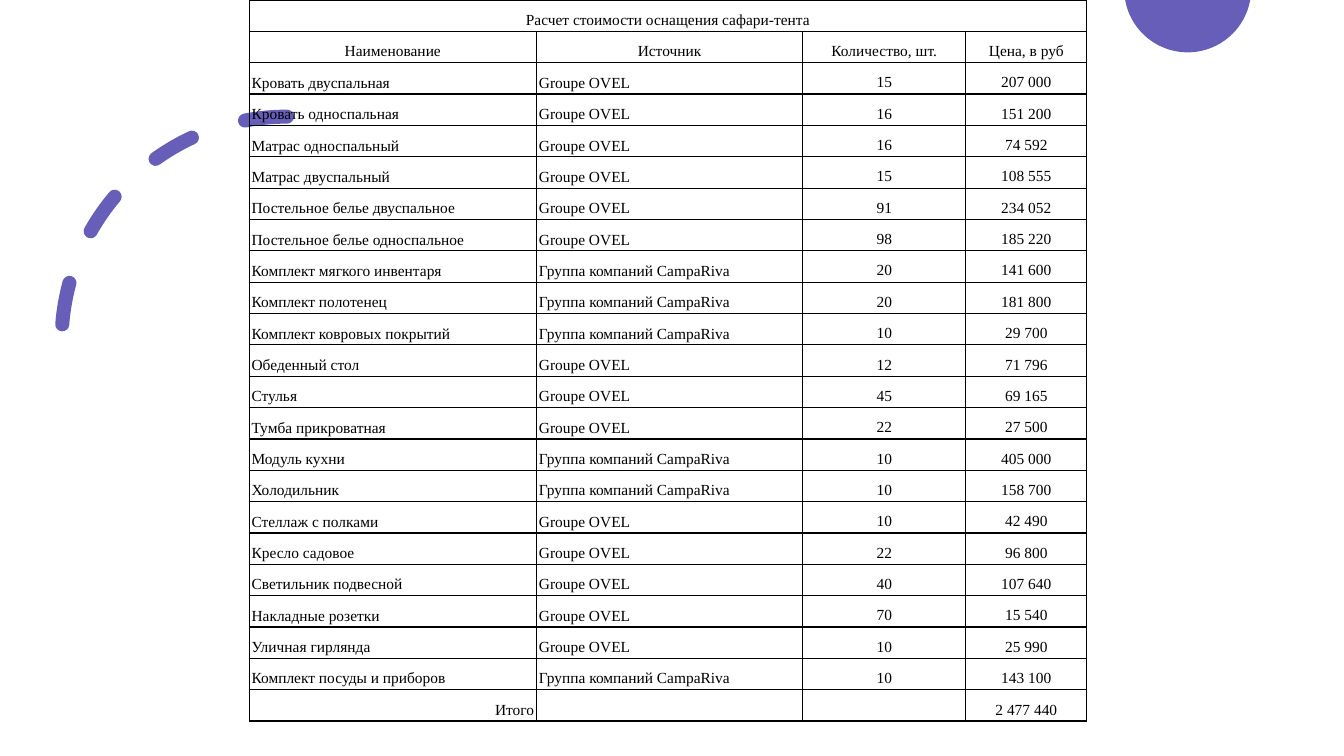
import math
from dataclasses import dataclass
from typing import Any

from lxml import etree
from pptx import Presentation
from pptx import util as u
from pptx.dml.color import RGBColor
from pptx.enum import dml, shapes, text
from pptx.oxml import ns


@dataclass(frozen=True)
class Theme:
    accent: RGBColor = RGBColor(0x66, 0x5E, 0xB8)
    ink: RGBColor = RGBColor(0, 0, 0)
    font: str = "Times New Roman"
    size: u.Pt = u.Pt(11)
    border: u.Pt = u.Pt(1)
    arc_line: u.Pt = u.Pt(10)
    inset: u.Cm = u.Cm(0.06)
    spacing: float = 1.5


@dataclass(frozen=True)
class Item:
    name: str
    source: str
    count: str
    price: str


@dataclass(frozen=True)
class Column:
    title: str
    width: float
    align: text.PP_ALIGN
    anchor: text.MSO_ANCHOR


@dataclass(frozen=True)
class Circle:
    x: float
    y: float
    radius: float


THEME = Theme()
LEFT, CENTER, RIGHT = text.PP_ALIGN.LEFT, text.PP_ALIGN.CENTER, text.PP_ALIGN.RIGHT
MIDDLE, BOTTOM = text.MSO_ANCHOR.MIDDLE, text.MSO_ANCHOR.BOTTOM
TITLE = "Расчет стоимости оснащения сафари-тента"
TABLE_LEFT, ROW_HEIGHT = 6.28, 0.79
COLUMNS = [
    Column("Наименование", 7.24, LEFT, BOTTOM),
    Column("Источник", 6.71, LEFT, BOTTOM),
    Column("Количество, шт.", 4.11, CENTER, MIDDLE),
    Column("Цена, в руб", 3.05, CENTER, MIDDLE),
]
STORE = "Groupe OVEL"
CAMP = "Группа компаний CampaRiva"
ITEMS = [
    Item("Кровать двуспальная", STORE, "15", "207 000"),
    Item("Кровать односпальная", STORE, "16", "151 200"),
    Item("Матрас односпальный", STORE, "16", "74 592"),
    Item("Матрас двуспальный", STORE, "15", "108 555"),
    Item("Постельное белье двуспальное", STORE, "91", "234 052"),
    Item("Постельное белье односпальное", STORE, "98", "185 220"),
    Item("Комплект мягкого инвентаря", CAMP, "20", "141 600"),
    Item("Комплект полотенец", CAMP, "20", "181 800"),
    Item("Комплект ковровых покрытий", CAMP, "10", "29 700"),
    Item("Обеденный стол", STORE, "12", "71 796"),
    Item("Стулья", STORE, "45", "69 165"),
    Item("Тумба прикроватная", STORE, "22", "27 500"),
    Item("Модуль кухни", CAMP, "10", "405 000"),
    Item("Холодильник", CAMP, "10", "158 700"),
    Item("Стеллаж с полками", STORE, "10", "42 490"),
    Item("Кресло садовое", STORE, "22", "96 800"),
    Item("Светильник подвесной", STORE, "40", "107 640"),
    Item("Накладные розетки", STORE, "70", "15 540"),
    Item("Уличная гирлянда", STORE, "10", "25 990"),
    Item("Комплект посуды и приборов", CAMP, "10", "143 100"),
]
TOTAL = Item("Итого", "", "", "2 477 440")


def draw_corner_circle(s: Any, circle: Circle, steps: int = 60) -> None:
    start = math.asin(-circle.y / circle.radius)
    angles = [start + (math.pi - 2 * start) * i / steps for i in range(steps + 1)]
    points = [
        (
            u.Cm(circle.x + circle.radius * math.cos(a)),
            max(0, u.Cm(circle.y + circle.radius * math.sin(a))),
        )
        for a in angles
    ]
    builder = s.shapes.build_freeform(*points[0])
    builder.add_line_segments(points[1:], close=True)
    sp = builder.convert_to_shape()
    sp.shadow.inherit = False
    sp.fill.solid()
    sp.fill.fore_color.rgb = THEME.accent
    sp.line.fill.background()


def draw_dashed_arc(s: Any, circle: Circle) -> None:
    side = u.Cm(2 * circle.radius)
    sp = s.shapes.add_shape(
        shapes.MSO_SHAPE.ARC,
        u.Cm(circle.x - circle.radius),
        u.Cm(circle.y - circle.radius),
        side,
        side,
    )
    sp.shadow.inherit = False
    sp.rotation = 180
    sp.element.spPr.find(ns.qn("a:xfrm")).set("flipV", "1")
    sp.fill.background()
    sp.line.color.rgb = THEME.accent
    sp.line.width = THEME.arc_line
    sp.line.dash_style = dml.MSO_LINE.DASH
    sp.line._ln.set("cap", "rnd")
    etree.SubElement(sp.line._ln, ns.qn("a:round"))


def add_borders(cell: Any) -> None:
    props = cell._tc.get_or_add_tcPr()
    for i, side in enumerate(("lnL", "lnR", "lnT", "lnB")):
        line = etree.Element(ns.qn(f"a:{side}"), w=str(THEME.border))
        fill = etree.SubElement(line, ns.qn("a:solidFill"))
        etree.SubElement(fill, ns.qn("a:srgbClr"), val=str(THEME.ink))
        props.insert(i, line)


def fill_cell(
    cell: Any, words: str, align: text.PP_ALIGN, anchor: text.MSO_ANCHOR
) -> None:
    cell.fill.background()
    cell.margin_left = cell.margin_right = THEME.inset
    cell.margin_top = cell.margin_bottom = THEME.inset
    cell.vertical_anchor = anchor
    add_borders(cell)
    p = cell.text_frame.paragraphs[0]
    if not words:
        p._p.get_or_add_endParaRPr().set("sz", str(int(THEME.size.pt * 100)))
        return
    p.alignment = align
    p.line_spacing = THEME.spacing
    r = p.add_run()
    r.text = words
    r.font.name = THEME.font
    r.font.size = THEME.size
    r.font.color.rgb = THEME.ink


def draw_cost_table(s: Any) -> None:
    count = len(ITEMS) + 3
    width = sum(column.width for column in COLUMNS)
    table = s.shapes.add_table(
        count, len(COLUMNS), u.Cm(TABLE_LEFT), 0, u.Cm(width), u.Cm(ROW_HEIGHT * count)
    ).table
    table.first_row = table.horz_banding = False
    for row in table.rows:
        row.height = u.Cm(ROW_HEIGHT)
    for i, column in enumerate(COLUMNS):
        table.columns[i].width = u.Cm(column.width)
        fill_cell(table.cell(0, i), "" if i else TITLE, CENTER, MIDDLE)
        fill_cell(table.cell(1, i), column.title, CENTER, MIDDLE)
    table.cell(0, 0).merge(table.cell(0, len(COLUMNS) - 1))
    for row, item in enumerate(ITEMS, start=2):
        values = (item.name, item.source, item.count, item.price)
        for i, (column, words) in enumerate(zip(COLUMNS, values)):
            fill_cell(table.cell(row, i), words, column.align, column.anchor)
    totals = (TOTAL.name, TOTAL.source, TOTAL.count, TOTAL.price)
    for i, words in enumerate(totals):
        fill_cell(table.cell(count - 1, i), words, CENTER if i else RIGHT, BOTTOM)


def main() -> None:
    prs = Presentation()
    prs.slide_width, prs.slide_height = u.Cm(33.87), u.Cm(19.05)
    s = prs.slides.add_slide(prs.slide_layouts[6])
    draw_corner_circle(s, Circle(29.93, -0.28, 1.6))
    draw_dashed_arc(s, Circle(7.23, 8.62, 5.68))
    draw_cost_table(s)
    prs.save("out.pptx")


if __name__ == "__main__":
    main()
